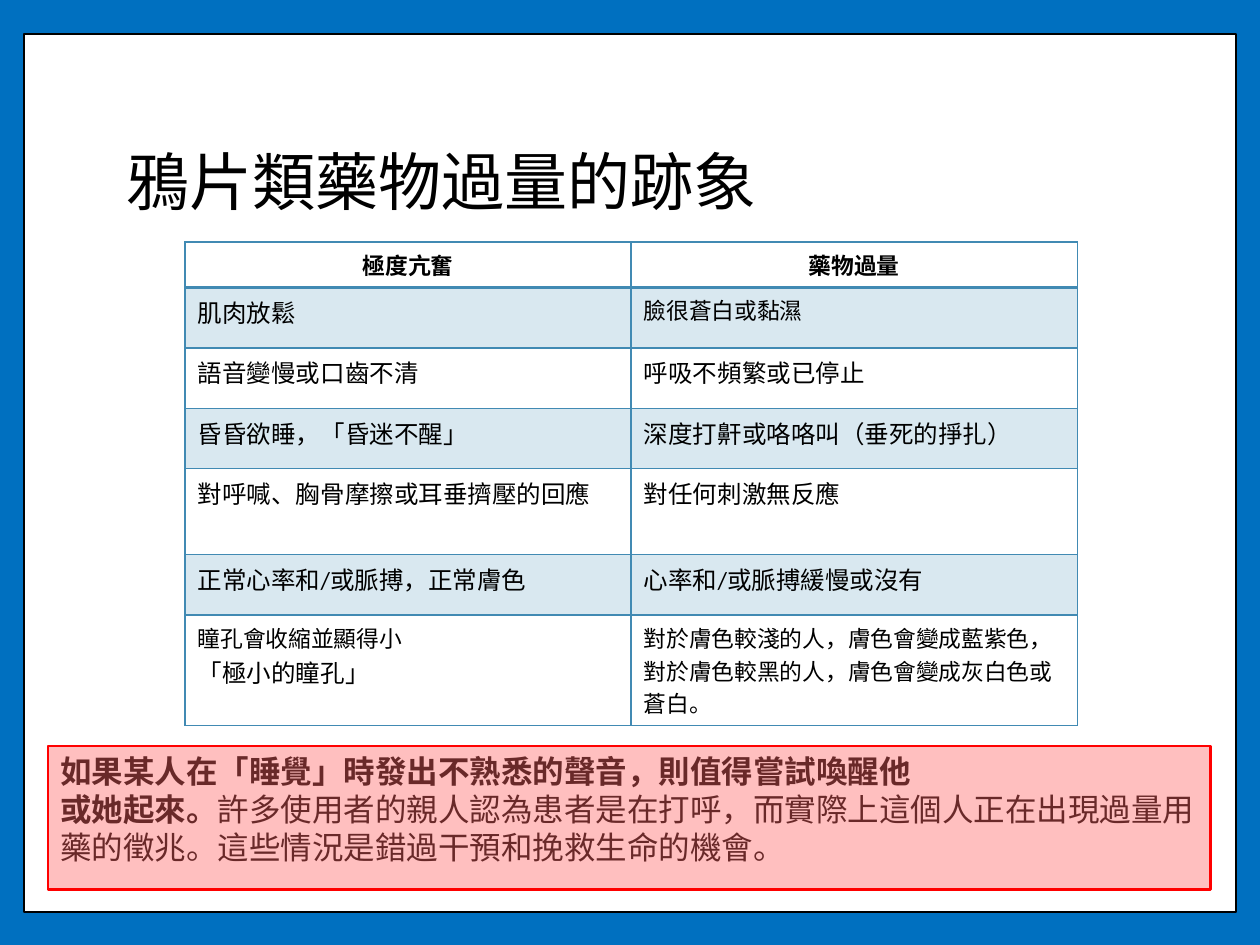
from pptx import Presentation
from pptx.dml.color import RGBColor
from pptx.enum.shapes import MSO_SHAPE
from pptx.enum.text import MSO_ANCHOR, PP_ALIGN
from pptx.oxml import parse_xml
from pptx.oxml.ns import nsdecls, qn
from pptx.util import Inches, Pt
from lxml import etree

FONT = "Calibri"
BLUE, BAND, RED = "418AB3", "D9E8F0", "FF0000"

TITLE = "鴉片類藥物過量的跡象"
HEADERS = ["極度亢奮", "藥物過量"]
# Each cell is a list of (text, size) paragraphs
ROWS = [
    ([("肌肉放鬆", 14)], [("臉很蒼白或黏濕", 13)]),
    ([("語音變慢或口齒不清", 14)], [("呼吸不頻繁或已停止", 14)]),
    ([("昏昏欲睡，「昏迷不醒」", 14)], [("深度打鼾或咯咯叫（垂死的掙扎）", 14)]),
    ([("對呼喊、胸骨摩擦或耳垂擠壓的回應", 14)], [("對任何刺激無反應", 14)]),
    ([("正常心率和/或脈搏，正常膚色", 14)], [("心率和/或脈搏緩慢或沒有", 14)]),
    ([("瞳孔會收縮並顯得小", 13), ("「極小的瞳孔」", 14)],
     [("對於膚色較淺的人，膚色會變成藍紫色，對於膚色較黑的人，膚色會變成灰白色或蒼白。", 13)]),
]
ROW_HEIGHTS = [0.33, 0.48, 0.48, 0.48, 0.68, 0.48, 0.48]
# Paragraphs of (bold text, lines of regular text)
WARNING = [
    ("如果某人在「睡覺」時發出不熟悉的聲音，則值得嘗試喚醒他", []),
    ("或她起來。", ["許多使用者的親人認為患者是在打呼，而實際上這個人正在出現過量用",
               "藥的徵兆。這些情況是錯過干預和挽救生命的機會。"]),
]


def rgb(color):
    return RGBColor.from_string(color)


def set_font(font, size, color="000000", bold=False):
    font.name, font.size, font.bold = FONT, Pt(size), bold
    font.color.rgb = rgb(color)


def add_rect(box, fill, line, width):
    sp = s.shapes.add_shape(MSO_SHAPE.RECTANGLE, *map(Inches, box))
    sp.shadow.inherit = False
    sp.fill.solid()
    sp.fill.fore_color.rgb = rgb(fill)
    sp.line.color.rgb = rgb(line)
    sp.line.width = Pt(width)
    return sp


def add_text(box):
    tf = s.shapes.add_textbox(*map(Inches, box)).text_frame
    tf.word_wrap = True
    return tf


def set_borders(cell, bottom):
    tc_pr = cell._tc.get_or_add_tcPr()
    for i, (side, width) in enumerate([("L", 1), ("R", 1), ("T", 1), ("B", bottom)]):
        tc_pr.insert(i, parse_xml(
            f'<a:ln{side} {nsdecls("a")} w="{Pt(width)}"><a:solidFill>'
            f'<a:srgbClr val="{BLUE}"/></a:solidFill></a:ln{side}>'))


def fill_cell(cell, paragraphs, header, band):
    tf = cell.text_frame
    for i, (text, size) in enumerate(paragraphs):
        p = tf.add_paragraph() if i else tf.paragraphs[0]
        p.text = text
        p.alignment = PP_ALIGN.CENTER if header else PP_ALIGN.LEFT
        set_font(p.font, size, bold=header)
    if band:
        cell.fill.solid()
        cell.fill.fore_color.rgb = rgb(BAND)
    else:
        cell.fill.background()
    set_borders(cell, 2 if header else 1)


prs = Presentation()
prs.slide_width, prs.slide_height = Inches(10), Inches(7.5)
s = prs.slides.add_slide(prs.slide_layouts[6])

# Blue frame around a white panel
s.background.fill.solid()
s.background.fill.fore_color.rgb = rgb("0070C0")
add_rect((0.19, 0.27, 9.62, 6.97), "FFFFFF", "000000", 1)

# Table of signs
table = s.shapes.add_table(len(ROW_HEIGHTS), len(HEADERS), Inches(1.47), Inches(1.92),
                           Inches(7.08), Inches(sum(ROW_HEIGHTS))).table
table.first_row = table.horz_banding = False
for row, height in zip(table.rows, ROW_HEIGHTS):
    row.height = Inches(height)
for r, cells in enumerate([[[(h, 13)] for h in HEADERS], *ROWS]):
    for c, paragraphs in enumerate(cells):
        fill_cell(table.cell(r, c), paragraphs, header=r == 0, band=r % 2 == 1)

# Title
tf = add_text((0.91, 0.73, 8.1, 1.48))
tf.vertical_anchor = MSO_ANCHOR.MIDDLE
p = tf.paragraphs[0]
p.text = TITLE
p.line_spacing = 0.9
set_font(p.font, 36)

# Warning text
tf = add_text((0.38, 5.92, 9.58, 1.14))
for i, (lead, lines) in enumerate(WARNING):
    p = tf.add_paragraph() if i else tf.paragraphs[0]
    r = p.add_run()
    r.text = lead
    set_font(r.font, 18, "383838", True)
    for j, line in enumerate(lines):
        if j:
            p.add_line_break()
        r = p.add_run()
        r.text = line
        set_font(r.font, 18, "383838")

# Translucent red box over the warning
sp = add_rect((0.38, 5.92, 9.23, 1.14), RED, RED, 1.5)
color = sp._element.spPr.find(qn("a:solidFill")).find(qn("a:srgbClr"))
etree.SubElement(color, qn("a:alpha"), val="25000")

prs.save("out.pptx")
